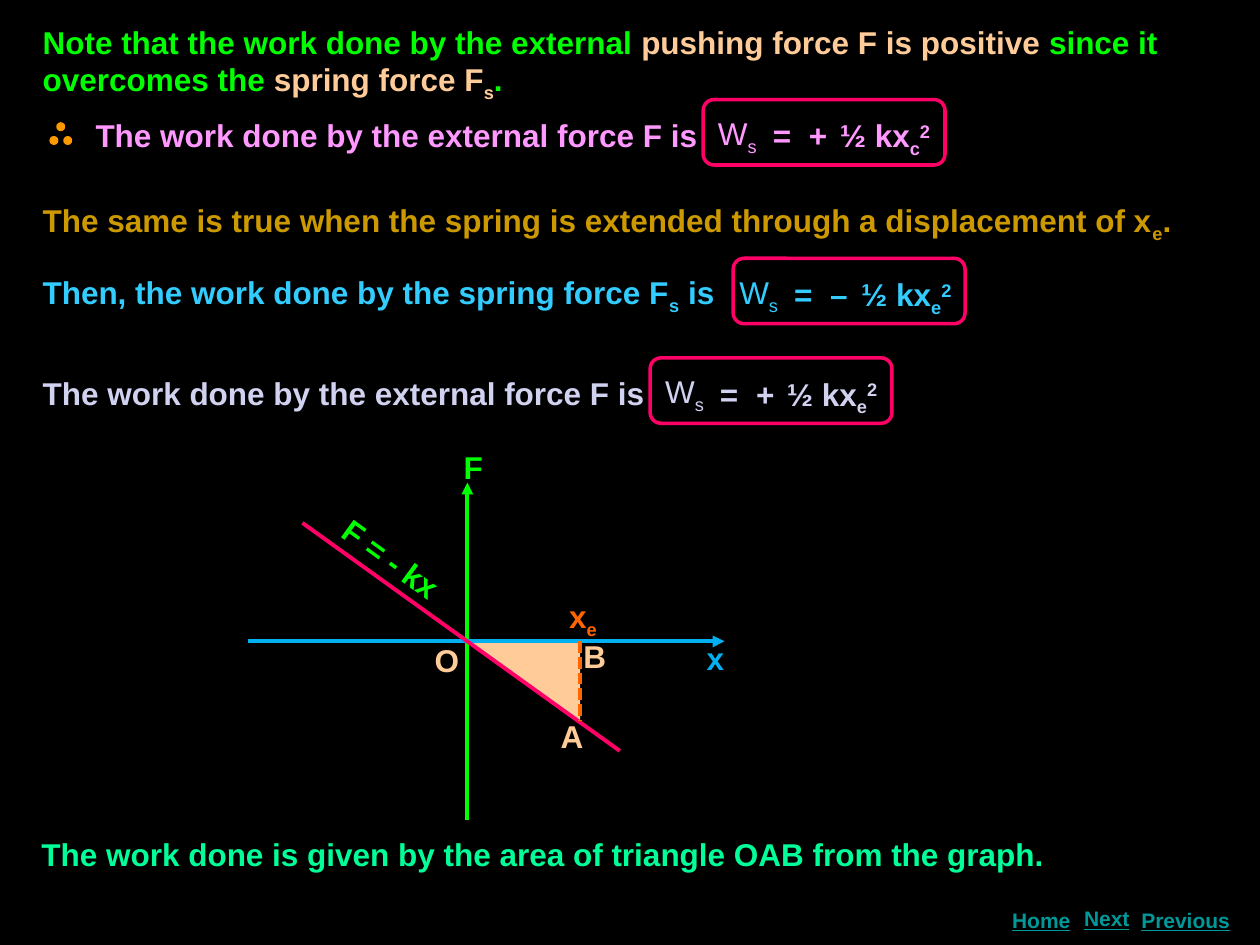
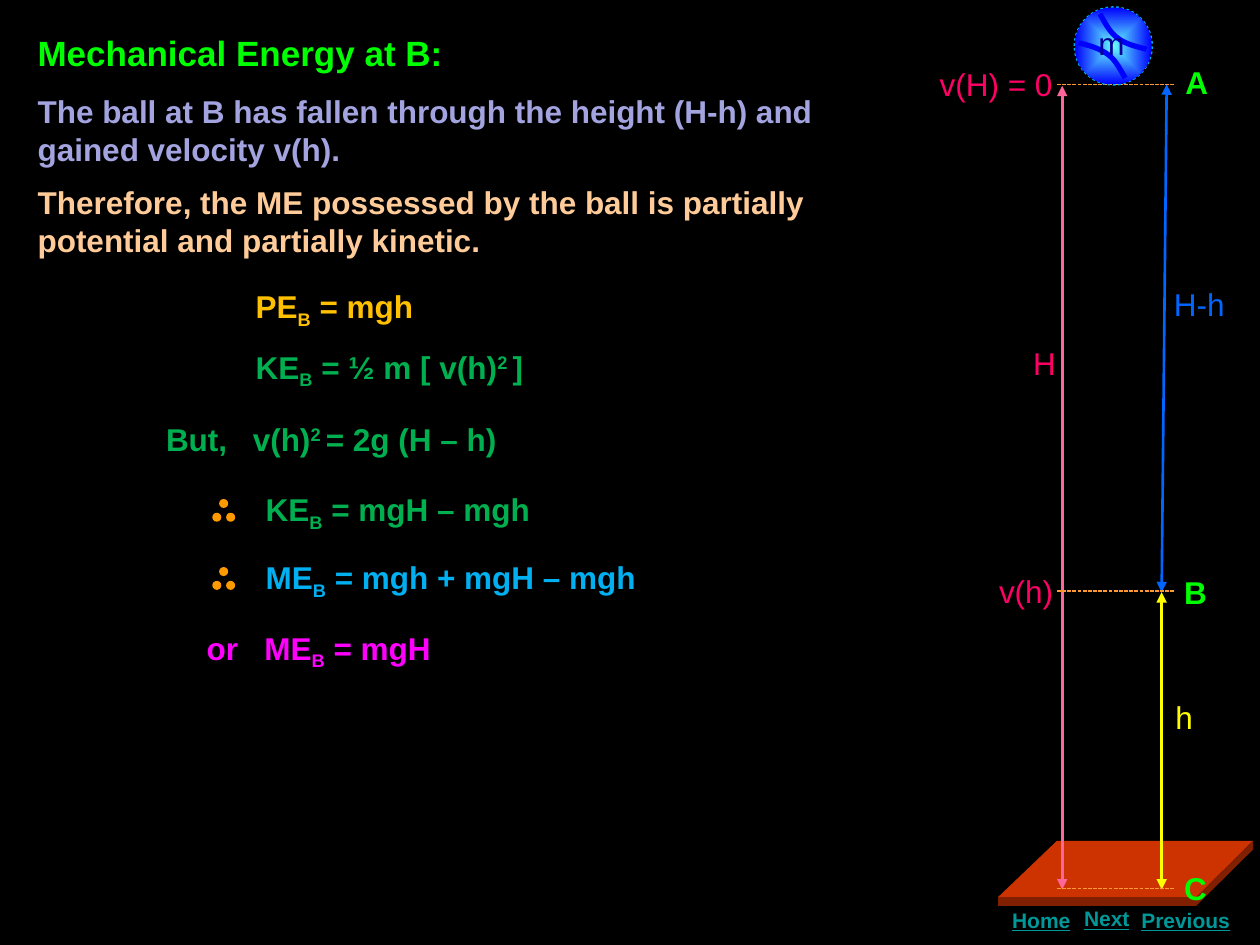
import pptx
import pptx.util
import pptx.dml.color
import pptx.enum.dml
import pptx.enum.shapes
import pptx.enum.text
import pptx.oxml.ns
import lxml.etree

Pt = pptx.util.Pt
RGB = pptx.dml.color.RGBColor.from_string
SHAPE = pptx.enum.shapes.MSO_SHAPE
DASH = pptx.enum.dml.MSO_LINE
qn = pptx.oxml.ns.qn

BLACK = RGB("000000")
GREEN = RGB("00FF00")
PEACH = RGB("FFCC99")
PINK = RGB("FF99FF")
ROSE = RGB("FF0066")
LIGHT_ROSE = RGB("FF6699")
AMBER = RGB("FF9900")
DASH_AMBER = RGB("FF9933")
OCHRE = RGB("CC9900")
SKY = RGB("33CCFF")
AZURE = RGB("00B0F0")
LILAC = RGB("D1D1F0")
LAVENDER = RGB("A3A3E0")
ORANGE = RGB("FF6600")
MINT = RGB("00FF99")
TEAL = RGB("009999")
GOLD = RGB("FFC000")
LEAF = RGB("00B050")
MAGENTA = RGB("FF00FF")
BLUE = RGB("0066FF")
DEEP_BLUE = RGB("0000FF")
NAVY = RGB("000099")
CYAN = RGB("66FFFF")
YELLOW = RGB("FFFF00")
BRICK = RGB("CC3300")
DARK_BRICK = RGB("802000")

FONT = "Arial"
SUB, SUPER = -25000, 30000

NAVIGATION = [("Home", 569.5, 514.8, 51), ("Next", 609.8, 514.1, 45.4),
              ("Previous", 643.7, 514.8, 67.7)]

WORK_TEXT = [
    (17.3, 9.4, 683.3, GREEN, [
        "Note that the work done by the external ",
        ("pushing force F is positive", 0, PEACH),
        " since it overcomes the ", ("spring force F", 0, PEACH),
        ("s", SUB, PEACH), "."]),
    (47.5, 62.6, 370, PINK, ["The work done by the external force F is"]),
    (17.3, 111.6, 683.3, OCHRE, [
        "The same is true when the spring is extended through a displacement of x",
        ("e", SUB), "."]),
    (17.3, 152.6, 410, SKY,
     ["Then, the work done by the spring force F", ("s", SUB), " is"]),
    (17.3, 210.2, 370, LILAC, ["The work done by the external force F is"]),
    (16.6, 473.8, 600, MINT,
     ["The work done is given by the area of triangle OAB from the graph."]),
]
WORK_EQUATIONS = [
    (401.8, 56.9, 138.2, 403.2, PINK, "+", "c"),
    (419, 147.6, 132.5, 415.4, SKY, "–", "e"),
    (371.5, 204.5, 138.2, 373, LILAC, "+", "e"),
]
GRAPH_LABELS = [
    (257.8, 252.7, 39.6, GREEN, ["F"]),
    (241.2, 362.9, 30.2, PEACH, ["O"]),
    (396.7, 361.4, 24, AZURE, ["x"]),
    (318.2, 337.7, 39.6, ORANGE, ["x", ("e", SUB)]),
    (313.2, 406.1, 30.2, PEACH, ["A"]),
    (326.2, 360.7, 30.2, PEACH, ["B"]),
]
SLOPE_LABEL = (184.3, 307.4, 85, GREEN, ["F = - kx"])
ORIGIN = (267.1, 366.5)
TRIANGLE_SIZE = (64.4, 45.4)

ENERGY_TITLE = (14.4, 14.4, 249.8, GREEN, ["Mechanical Energy at B:"])
ENERGY_STATEMENTS = (14.4, 49, 504.7, [
    (LAVENDER, ["The ball at B has fallen through the height (H-h) and gained velocity v(h)."]),
    (PEACH, ["Therefore, the ME possessed by the ball is partially potential and partially kinetic."]),
])
ENERGY_FORMULAS = [
    (139, 160.6, 115, GOLD, ["PE", ("B", SUB), " = mgh"]),
    (139, 195.1, 190, LEAF,
     ["KE", ("B", SUB), " = ½ m [ v(h)", ("2 ", SUPER), "]"]),
    (87.8, 236.2, 60, LEAF, ["But,"]),
    (137.4, 236.2, 180, LEAF, ["v(h)", ("2 ", SUPER), "= 2g (H – h)"]),
    (144.7, 276.5, 190, LEAF, ["KE", ("B", SUB), " = mgH – mgh"]),
    (144.7, 315.4, 250, AZURE, ["ME", ("B", SUB), " = mgh + mgH – mgh"]),
    (111, 355.7, 40, MAGENTA, ["or"]),
    (144, 355.7, 130, MAGENTA, ["ME", ("B", SUB), " = mgH"]),
]
POINTS = [(670.3, 32.4, 35, GREEN, ["A"]), (669.6, 324, 35, GREEN, ["B"]),
          (669.6, 493.2, 35, GREEN, ["C"])]
MEASURES = [
    (583.2, 193, 35, ROSE, ["H"]),
    (663.8, 159.1, 50, BLUE, ["H-h"]),
    (529.9, 33.8, 90, ROSE, ["v(H) = 0"]),
    (563.8, 323.3, 55, ROSE, ["v(h)"]),
    (664.6, 395.3, 30, YELLOW, ["h"]),
    (620.6, 10.1, 35, NAVY, ["m"]),
]
LEVELS = [48.3, 337.7, 507.6]
HEIGHT_ARROWS = [((607, 49), (607, 508.3), LIGHT_ROSE),
                 ((663.8, 338.4), (666.7, 48.2), BLUE),
                 ((663.8, 338.4), (663.8, 508.3), YELLOW)]
GROUND = [
    (BRICK, [(604, 480.5), (716, 480.5), (683.5, 512.7), (570.3, 512.7)]),
    (DARK_BRICK, [(570.3, 512.7), (683.5, 512.7), (683.5, 517.7), (570.3, 517.7)]),
    (DARK_BRICK, [(716, 480.5), (716, 485.5), (683.5, 517.7), (683.5, 512.7)]),
]
BALL = (614.2, 4.3, 43.9, 43.9)
BALL_SEAMS = [
    [(628.6, 7.9), (631.4, 13), (634.3, 18.7), (638.6, 21.6),
     (643, 25.2), (649.4, 26.6), (655.2, 28.1)],
    [(616.3, 24.5), (622.1, 25.9), (627.8, 27.4), (632.9, 31),
     (637.2, 33.8), (640.1, 39.6), (643, 44.6)],
]


def fill_paragraph(para, colour, spans, size, bold):
    font = para.font
    font.name, font.size, font.bold = FONT, Pt(size), bold
    font.color.rgb = colour
    for span in spans:
        text, shift, *tint = (span, 0) if isinstance(span, str) else span
        run = para.add_run()
        run.text = text
        if shift:
            run.font._element.set("baseline", str(shift))
        if tint:
            run.font.color.rgb = tint[0]


def add_paragraphs(page, left, top, width, paragraphs, size=18, bold=True):
    box = page.shapes.add_textbox(Pt(left), Pt(top), Pt(width), Pt(28.8))
    box.text_frame.word_wrap = True
    for index, (colour, spans) in enumerate(paragraphs):
        para = box.text_frame.paragraphs[0]
        if index:
            para = box.text_frame.add_paragraph()
            para.space_before = Pt(9)
        fill_paragraph(para, colour, spans, size, bold)
    return box


def add_label(page, left, top, width, colour, spans, size=18, bold=True):
    return add_paragraphs(page, left, top, width, [(colour, spans)], size, bold)


def paint(shape, fill=None, line=None, weight=0.75):
    shape.shadow.inherit = False
    if fill is None:
        shape.fill.background()
    else:
        shape.fill.solid()
        shape.fill.fore_color.rgb = fill
    if line is None:
        shape.line.fill.background()
    else:
        shape.line.color.rgb = line
        shape.line.width = Pt(weight)
    return shape


def add_figure(page, kind, left, top, width, height, **style):
    shape = page.shapes.add_shape(kind, Pt(left), Pt(top), Pt(width), Pt(height))
    return paint(shape, **style)


def add_outline(page, points, closed, **style):
    builder = page.shapes.build_freeform(Pt(points[0][0]), Pt(points[0][1]))
    builder.add_line_segments([(Pt(x), Pt(y)) for x, y in points[1:]], close=closed)
    return paint(builder.convert_to_shape(), **style)


def add_line(page, start, end, colour, weight, dash=None, heads=()):
    line = page.shapes.add_connector(
        pptx.enum.shapes.MSO_CONNECTOR.STRAIGHT, *map(Pt, start + end))
    line.line.color.rgb = colour
    line.line.width = Pt(weight)
    if dash:
        line.line.dash_style = dash
    stroke = line.line._get_or_add_ln()
    for head in heads:
        lxml.etree.SubElement(stroke, qn("a:" + head)).set("type", "triangle")
    lxml.etree.SubElement(line._element.spPr, qn("a:effectLst"))


def add_therefore(page, left, top):
    for across, down in [(0, 7.9), (7.9, 7.9), (3.9, 0)]:
        add_figure(page, SHAPE.OVAL, left + across, top + down, 4.4, 4.4,
                   fill=AMBER, line=AMBER)


def add_equation(page, left, top, width, start, colour, sign, letter):
    add_label(page, start, top + 4.7, 50, colour, ["W", ("s", SUB)], bold=False)
    for offset, spans in [(31.3, ["="]), (51.9, [sign]),
                          (69.6, ["½ kx", (letter, SUB), ("2", SUPER)])]:
        add_label(page, start + offset, top + 6, 79, colour, spans)
    add_figure(page, SHAPE.ROUNDED_RECTANGLE, left, top, width, 37.4,
               line=ROSE, weight=2)


def curve_points(controls, steps=10):
    points = [controls[0]]
    for first in range(0, len(controls) - 1, 3):
        section = controls[first:first + 4]
        for step in range(1, steps + 1):
            t = step / steps
            weights = ((1 - t) ** 3, 3 * t * (1 - t) ** 2, 3 * t * t * (1 - t), t ** 3)
            points.append(tuple(sum(w * point[axis] for w, point in zip(weights, section))
                                for axis in (0, 1)))
    return points


def add_ball(page):
    ring = add_figure(page, SHAPE.OVAL, *BALL, line=AZURE, weight=1.5)
    ring.line.dash_style = DASH.ROUND_DOT
    ball = add_figure(page, SHAPE.OVAL, *BALL)
    ball.fill.gradient()
    for stop, colour, position in zip(ball.fill.gradient_stops, (CYAN, DEEP_BLUE), (0, 1)):
        stop.color.rgb = colour
        stop.position = position
    gradient = ball._element.spPr.find(qn("a:gradFill"))
    gradient.remove(gradient.find(qn("a:lin")))
    shading = lxml.etree.SubElement(gradient, qn("a:path"))
    shading.set("path", "shape")
    centre = lxml.etree.SubElement(shading, qn("a:fillToRect"))
    for side in "ltrb":
        centre.set(side, "50000")
    for seam in BALL_SEAMS:
        add_outline(page, curve_points(seam), False, line=DEEP_BLUE, weight=3)


def add_page(deck):
    page = deck.slides.add_slide(deck.slide_layouts[6])
    page.background.fill.solid()
    page.background.fill.fore_color.rgb = BLACK
    return page


def add_navigation(page):
    for word, left, top, width in NAVIGATION:
        para = add_label(page, left, top, width, TEAL, [word], 12).text_frame.paragraphs[0]
        para.alignment = pptx.enum.text.PP_ALIGN.CENTER
        para.font.underline = True


def build_spring_work(page):
    for label in WORK_TEXT:
        add_label(page, *label)
    for equation in WORK_EQUATIONS:
        add_equation(page, *equation)
    add_therefore(page, 28.6, 70.2)
    x, y = ORIGIN
    width, height = TRIANGLE_SIZE
    triangle = add_figure(page, SHAPE.RIGHT_TRIANGLE, x, y, width, height, fill=PEACH)
    triangle.rotation = 180
    add_line(page, (x, 468.7), (x, 275.8), GREEN, 2.25, heads=["tailEnd"])
    add_line(page, (141.8, y), (414, y), AZURE, 2.25, heads=["tailEnd"])
    add_line(page, (172.8, 298.8), (354.2, 429.1), ROSE, 2.25)
    add_line(page, (x + width, y), (x + width, y + height), ORANGE, 2.25,
             DASH.SQUARE_DOT)
    for label in GRAPH_LABELS:
        add_label(page, *label)
    add_label(page, *SLOPE_LABEL).rotation = 36


def build_energy_at_b(page):
    add_label(page, *ENERGY_TITLE, size=20)
    add_paragraphs(page, *ENERGY_STATEMENTS)
    for formula in ENERGY_FORMULAS:
        add_label(page, *formula)
    for top in (285.5, 324.4):
        add_therefore(page, 121.7, top)
    for colour, corners in GROUND:
        add_outline(page, corners, True, fill=colour)
    for start, end, colour in HEIGHT_ARROWS:
        add_line(page, start, end, colour, 1.5, heads=["headEnd", "tailEnd"])
    for level in LEVELS:
        add_line(page, (604, level), (671.6, level), DASH_AMBER, 0.75, DASH.SQUARE_DOT)
    add_ball(page)
    for point in POINTS:
        add_label(page, *point)
    for measure in MEASURES:
        add_label(page, *measure, bold=False)


def main():
    deck = pptx.Presentation()
    deck.slide_width, deck.slide_height = Pt(720), Pt(540)
    for build in (build_spring_work, build_energy_at_b):
        page = add_page(deck)
        build(page)
        add_navigation(page)
    deck.save("out.pptx")


if __name__ == "__main__":
    main()
